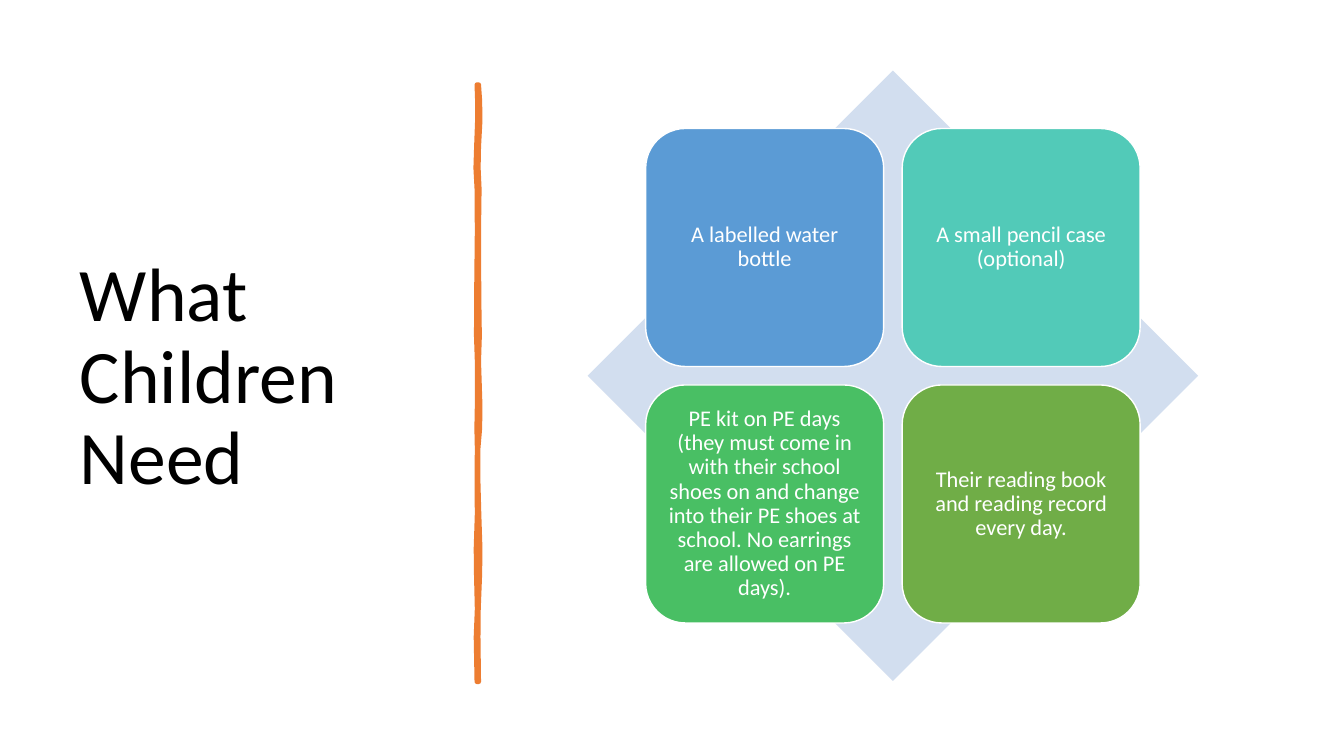
import dataclasses

import pptx
import pptx.dml.color
import pptx.enum.shapes
import pptx.enum.text
import pptx.util

Pt = pptx.util.Pt
Shape = pptx.enum.shapes.MSO_SHAPE
Align = pptx.enum.text.PP_ALIGN


@dataclasses.dataclass(frozen=True)
class Theme:
    font: str = "Calibri"
    title_size: float = 54
    card_size: float = 16
    line_spacing: float = 0.9
    ink: str = "000000"
    white: str = "FFFFFF"
    accent: str = "ED7D31"
    diamond: str = "D2DEEF"
    cards: tuple = ("5B9BD5", "52CAB8", "49BF64", "70AD47")


class SlideBuilder:
    def __init__(self, slide, theme):
        self.slide = slide
        self.theme = theme

    def paint(self, shape, fill, line=None, line_width=1):
        shape.shadow.inherit = False
        shape.fill.solid()
        shape.fill.fore_color.rgb = pptx.dml.color.RGBColor.from_string(fill)
        if line is None:
            shape.line.fill.background()
        else:
            shape.line.color.rgb = pptx.dml.color.RGBColor.from_string(line)
            shape.line.width = Pt(line_width)

    def set_text(self, frame, text, size, color, alignment):
        frame.word_wrap = True
        frame.vertical_anchor = pptx.enum.text.MSO_ANCHOR.MIDDLE
        paragraph = frame.paragraphs[0]
        paragraph.text = text
        paragraph.alignment = alignment
        paragraph.line_spacing = self.theme.line_spacing
        paragraph.font.name = self.theme.font
        paragraph.font.size = Pt(size)
        paragraph.font.color.rgb = pptx.dml.color.RGBColor.from_string(color)

    def title(self, text, left, top, width, height):
        box = self.slide.shapes.add_textbox(Pt(left), Pt(top), Pt(width), Pt(height))
        self.set_text(box.text_frame, text, self.theme.title_size, self.theme.ink, Align.LEFT)

    def shape(self, kind, left, top, size, fill, line=None):
        shape = self.slide.shapes.add_shape(kind, Pt(left), Pt(top), Pt(size), Pt(size))
        self.paint(shape, fill, line)
        return shape

    def card(self, text, left, top, size, fill):
        card = self.shape(Shape.ROUNDED_RECTANGLE, left, top, size, fill, self.theme.white)
        frame = card.text_frame
        frame.margin_left = frame.margin_right = Pt(5)
        frame.margin_top = frame.margin_bottom = Pt(5)
        self.set_text(frame, text, self.theme.card_size, self.theme.white, Align.CENTER)

    def brush_stroke(self, edges):
        """Draw a vertical stroke from (y, left x, right x) rows."""
        outline = [(right, y) for y, left, right in edges]
        outline += [(left, y) for y, left, right in reversed(edges)]
        points = [(Pt(x), Pt(y)) for x, y in outline]
        builder = self.slide.shapes.build_freeform(*points[0])
        builder.add_line_segments(points[1:], close=True)
        self.paint(builder.convert_to_shape(), self.theme.accent, self.theme.accent, 3.25)


STROKE_EDGES = [
    (60.5, 340.6, 342), (72, 341, 342.8), (86, 341, 343), (105, 340.3, 342),
    (120, 339.8, 341.7), (135, 340.6, 342.4), (165, 340.8, 342), (212, 340.3, 342.2),
    (240, 340.2, 342.6), (258, 340.8, 342), (290, 340.8, 343), (306, 340.5, 342.8),
    (320, 340.8, 341.6), (345, 340.6, 341.6), (367, 340.8, 342.2), (392, 340, 343),
    (410, 340.2, 342.8), (435, 340.8, 341.8), (455, 340, 341.6), (487, 340.6, 342),
]

CARD_TEXTS = [
    "A labelled water bottle",
    "A small pencil case (optional)",
    "PE kit on PE days (they must come in with their school shoes on and change "
    "into their PE shoes at school. No earrings are allowed on PE days).",
    "Their reading book and reading record every day.",
]


def main():
    presentation = pptx.Presentation()
    presentation.slide_width = Pt(960)
    presentation.slide_height = Pt(540)
    slide = presentation.slides.add_slide(presentation.slide_layouts[6])
    theme = Theme()
    builder = SlideBuilder(slide, theme)

    # Title and divider
    builder.title("What Children Need", 50, 50.4, 269, 440)
    builder.brush_stroke(STROKE_EDGES)

    # Diamond behind the cards
    center_x, center_y = 637.8, 268.4
    diamond_size = 436
    builder.shape(Shape.DIAMOND, center_x - diamond_size / 2, center_y - diamond_size / 2,
                  diamond_size, theme.diamond)

    # Two by two grid of cards around the same centre
    card_size, gap = 170, 13.2
    grid_offset = card_size + gap / 2
    for index, (text, fill) in enumerate(zip(CARD_TEXTS, theme.cards)):
        row, column = divmod(index, 2)
        left = center_x - grid_offset + column * (card_size + gap)
        top = center_y - grid_offset + row * (card_size + gap)
        builder.card(text, left, top, card_size, fill)

    presentation.save("out.pptx")


if __name__ == "__main__":
    main()
